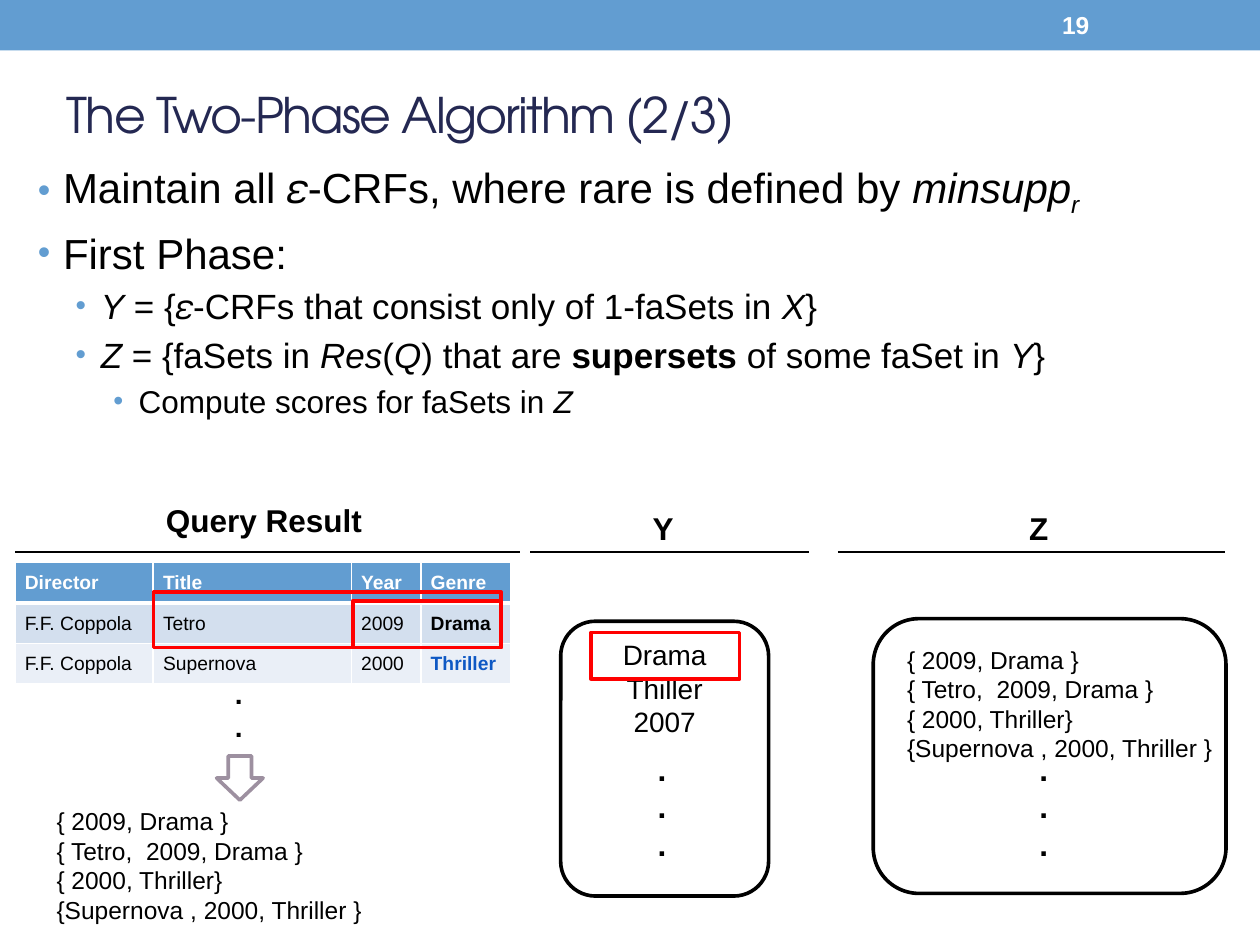
import pptx
import pptx.dml.color
import pptx.enum.shapes
import pptx.enum.text
import pptx.oxml
import pptx.oxml.ns
import pptx.util

Pt = pptx.util.Pt
SHAPE = pptx.enum.shapes.MSO_SHAPE
ALIGN = pptx.enum.text.PP_ALIGN
ANCHOR = pptx.enum.text.MSO_ANCHOR
BLUE, RED, BLACK, WHITE = "629DD1", "FF0000", "000000", "FFFFFF"

# Each bullet: level, size, bullet scale in percent, runs of (text, style)
BULLETS = [
    (0, 24, 85, [("Maintain all 𝜀-CRFs, where rare is defined by ", ""),
                 ("minsupp", "i"), ("r", "i sub")]),
    (0, 24, 85, [("First Phase:", "")]),
    (1, 20, 85, [("Y", "i"), (" = {𝜀-CRFs that consist only of 1-faSets in ", ""),
                 ("X", "i"), ("}", "")]),
    (1, 20, 85, [("Z", "i"), (" = {faSets in ", ""), ("Res", "i"), ("(", ""),
                 ("Q", "i"), (") that are ", ""), ("supersets", "b"),
                 (" of some faSet in ", ""), ("Y", "i"), ("}", "")]),
    (2, 18, 90, [("Compute scores for faSets in ", ""), ("Z", "i")]),
]
MOVIES = [
    ["Director", "Title", "Year", "Genre"],
    ["F.F. Coppola", "Tetro", "2009", "Drama"],
    ["F.F. Coppola", "Supernova", "2000", "Thriller"],
]
FASETS = ["{ 2009, Drama }", "{ Tetro,  2009, Drama }",
          "{ 2000, Thriller}", "{Supernova , 2000, Thriller }"]


def rgb(value):
    return pptx.dml.color.RGBColor.from_string(value)


def set_font(font, size, color=BLACK, bold=False, name="Arial"):
    font.name, font.size, font.bold = name, Pt(size), bold
    font.color.rgb = rgb(color)


def place(sp, left, top, width, height):
    sp.left, sp.top, sp.width, sp.height = map(Pt, (left, top, width, height))


def add_xml(parent, xml):
    ns = pptx.oxml.ns.nsdecls("a")
    parent.append(pptx.oxml.parse_xml(xml.replace("/>", f" {ns}/>", 1)
                                      if xml.endswith("/>") and xml.count("<") == 1
                                      else xml.replace(">", f" {ns}>", 1)))


def add_box(slide, kind, box, fill=None, line=None):
    sp = slide.shapes.add_shape(kind, *map(Pt, box))
    sp.shadow.inherit = False
    if fill:
        sp.fill.solid()
        sp.fill.fore_color.rgb = rgb(fill)
    else:
        sp.fill.background()
    if line:
        sp.line.color.rgb = rgb(line)
        sp.line.width = Pt(2.08)
    else:
        sp.line.fill.background()


def add_text(slide, box, lines, size, bold=False, color=BLACK,
             align=ALIGN.LEFT, wrap=False, anchor=ANCHOR.TOP):
    tf = slide.shapes.add_textbox(*map(Pt, box)).text_frame
    tf.word_wrap = wrap
    tf.vertical_anchor = anchor
    tf.text = "\n".join(lines)
    for p in tf.paragraphs:
        p.alignment = align
        set_font(p.font, size, color, bold)


def add_rule(slide, x1, x2, y):
    line = slide.shapes.add_connector(
        pptx.enum.shapes.MSO_CONNECTOR.STRAIGHT, Pt(x1), Pt(y), Pt(x2), Pt(y))
    line.line.color.rgb = rgb(BLACK)
    line.line.width = Pt(1.5)
    add_xml(line._element.spPr, "<a:effectLst/>")


def fill_title(sp):
    place(sp, 31, 31.7, 648, 67)
    tf = sp.text_frame
    tf.vertical_anchor = ANCHOR.MIDDLE
    p = tf.paragraphs[0]
    p.alignment = ALIGN.LEFT
    r = p.add_run()
    r.text = "The Two-Phase Algorithm (2/3)"
    set_font(r.font, 28, "242852", name="TeX Gyre Adventor")
    r._r.get_or_add_rPr().set("spc", "-100")


def fill_body(sp):
    place(sp, 14.4, 88.6, 692, 187)
    tf = sp.text_frame
    for i, (level, size, scale, runs) in enumerate(BULLETS):
        p = tf.add_paragraph() if i else tf.paragraphs[0]
        p.level = level
        pPr = p._p.get_or_add_pPr()
        pPr.set("marL", str(Pt(14.4 + 21.6 * level)))
        pPr.set("indent", str(-Pt(14.4)))
        add_xml(pPr, f'<a:buClr><a:srgbClr val="{BLUE}"/></a:buClr>')
        add_xml(pPr, f'<a:buSzPct val="{scale * 1000}"/>')
        add_xml(pPr, '<a:buFont typeface="Arial"/>')
        add_xml(pPr, '<a:buChar char="•"/>')
        set_font(p.font, size)
        for text, style in runs:
            r = p.add_run()
            r.text = text
            styles = style.split()
            if "i" in styles:
                r.font.italic = True
            if "b" in styles:
                r.font.bold = True
            if "sub" in styles:
                r._r.get_or_add_rPr().set("baseline", "-25000")


def set_borders(cell, bottom):
    """Draw white borders, 1 pt wide except for the bottom one."""
    tcPr = cell._tc.get_or_add_tcPr()
    for i, (side, width) in enumerate(zip("LRTB", (1, 1, 1, bottom))):
        ln = pptx.oxml.parse_xml(
            f'<a:ln{side} {pptx.oxml.ns.nsdecls("a")} w="{Pt(width)}"><a:solidFill>'
            f'<a:srgbClr val="{WHITE}"/></a:solidFill></a:ln{side}>')
        tcPr.insert(i, ln)


def add_movie_table(slide):
    widths, height = (79, 113.2, 39.8, 51.4), 23.2
    table = slide.shapes.add_table(
        len(MOVIES), len(widths), Pt(8.6), Pt(321.4),
        Pt(sum(widths)), Pt(height * len(MOVIES))).table
    for column, width in zip(table.columns, widths):
        column.width = Pt(width)
    for i, (row, fill) in enumerate(zip(MOVIES, (BLUE, "D3DFEE", "EAEFF7"))):
        table.rows[i].height = Pt(height)
        for j, text in enumerate(row):
            cell = table.cell(i, j)
            cell.text = text
            cell.fill.solid()
            cell.fill.fore_color.rgb = rgb(fill)
            cell.vertical_anchor = ANCHOR.MIDDLE
            cell.margin_left = cell.margin_right = Pt(5.6)
            cell.margin_top = cell.margin_bottom = Pt(2.8)
            color = WHITE if i == 0 else "0E58C4" if text == "Thriller" else BLACK
            set_font(cell.text_frame.paragraphs[0].font, 11, color, i == 0 or j == 3)
            set_borders(cell, 3 if i == 0 else 1)


def main():
    prs = pptx.Presentation()
    prs.slide_width, prs.slide_height = Pt(720), Pt(540)
    slide = prs.slides.add_slide(prs.slide_layouts[1])
    title, body = slide.placeholders
    fill_title(title)
    fill_body(body)
    add_box(slide, SHAPE.RECTANGLE, (0, 0, 720, 28.8), BLUE)
    add_text(slide, (599.8, 1.4, 84.2, 26), ["19"], 14, True, WHITE,
             wrap=True, anchor=ANCHOR.MIDDLE)

    for x1, x2 in ((8.6, 297.4), (303.1, 462.2), (478.8, 699.8)):
        add_rule(slide, x1, x2, 315.4)
    for heading, box in (("Query Result", (87.8, 283, 132.5, 29)),
                         ("Y", (365.8, 287.3, 22.3, 29)),
                         ("Z", (581, 287.3, 22.3, 29))):
        add_text(slide, box, [heading], 18, True)

    add_movie_table(slide)
    add_text(slide, (126.7, 383, 19.4, 46), ["."] * 2, 16, True, align=ALIGN.CENTER)
    add_box(slide, SHAPE.DOWN_ARROW, (123.8, 432, 26.6, 25.2), WHITE, "9D90A0")

    add_box(slide, SHAPE.ROUNDED_RECTANGLE, (320.4, 355, 118.8, 157), WHITE, BLACK)
    add_text(slide, (320.4, 360.7, 118.8, 65.5), ["Drama", "Thiller", "2007"], 16,
             align=ALIGN.CENTER, wrap=True)
    add_box(slide, SHAPE.ROUNDED_RECTANGLE, (499, 353.5, 201.6, 157), WHITE, BLACK)
    for left in (368.6, 586.8):
        add_text(slide, (left, 424.8, 19.4, 72.7), ["."] * 3, 18, True,
                 align=ALIGN.CENTER)
    for left, top in ((511.2, 365), (25.2, 457.2)):
        add_text(slide, (left, top, 200.9, 74.9), FASETS, 14)

    for box in ((201.6, 343.4, 85, 26.6), (337.7, 361.4, 85, 26.6),
                (87.8, 338.4, 198.7, 31.7)):
        add_box(slide, SHAPE.RECTANGLE, box, line=RED)
    prs.save("out.pptx")


if __name__ == "__main__":
    main()
